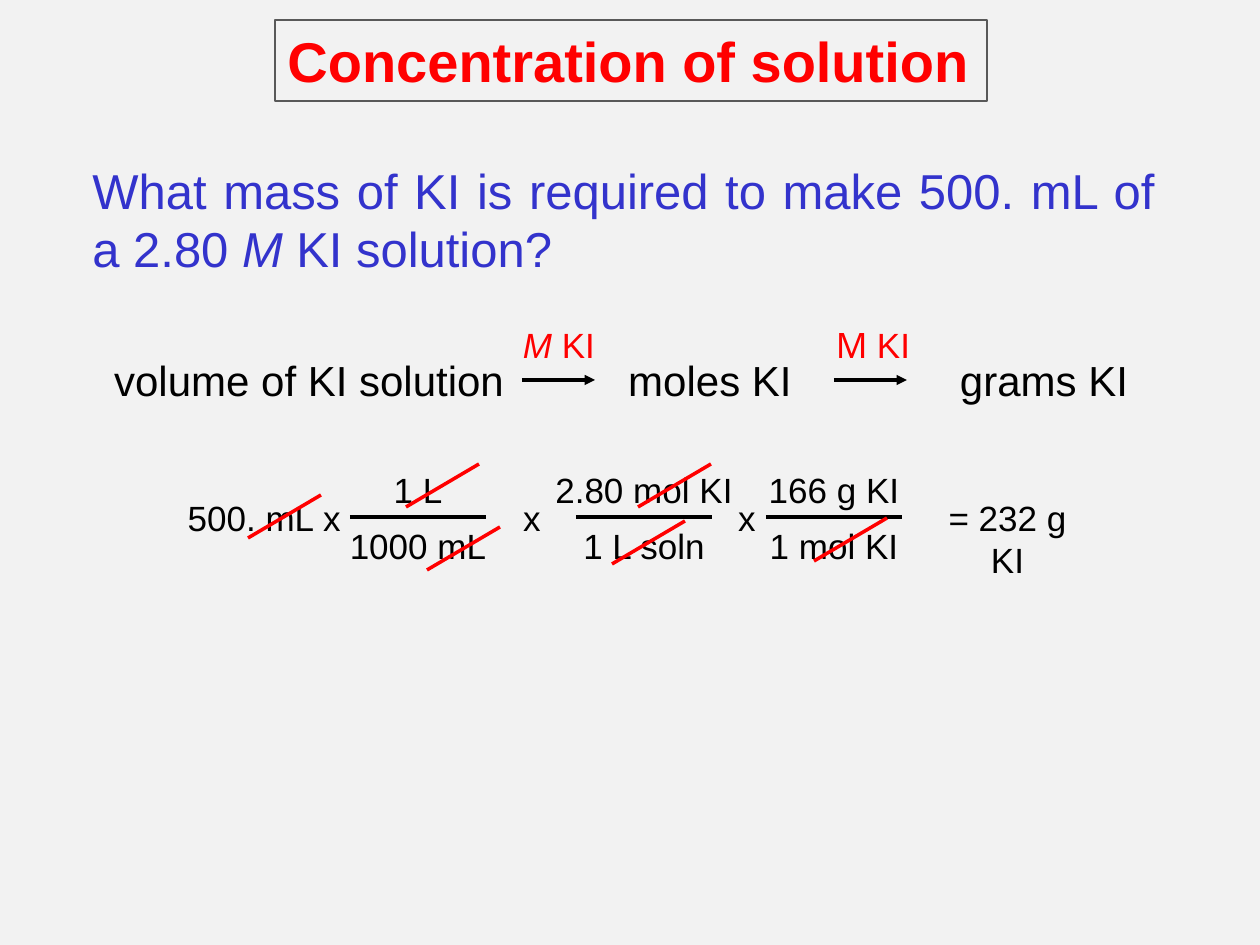
from dataclasses import dataclass
from typing import NamedTuple

from lxml import etree
from pptx import Presentation
from pptx import util as u
from pptx.dml.color import RGBColor
from pptx.enum import shapes, text
from pptx.oxml.ns import qn

PX = 914400 / 126  # EMU in one px


@dataclass(frozen=True)
class Theme:
    page: str = "F2F2F2"
    ink: str = "000000"
    accent: str = "FF0000"
    question: str = "3333CC"
    frame: str = "595959"
    font: str = "Arial"
    symbol_font: str = "Noto Sans"
    title_size: int = 32
    question_size: int = 28
    chain_size: int = 24
    small_size: int = 20


THEME = Theme()


class Box(NamedTuple):
    left: int
    top: int
    width: int
    height: int


class Span(NamedTuple):
    words: str
    style: dict = {}


class Label(NamedTuple):
    """Text centred on the x position middle."""
    middle: int
    top: int
    width: int
    spans: list[Span]
    style: dict
    wrap: bool = False


class Fraction(NamedTuple):
    times_middle: int
    middle: int
    numerator: str
    denominator: str


class Stroke(NamedTuple):
    x: int
    y: int
    dx: int
    dy: int
    color: str
    weight: float
    arrow: bool = False


def emu(*lengths: int) -> list[u.Emu]:
    return [u.Emu(round(length * PX)) for length in lengths]


def write(shape, spans: list[Span], style: dict, align: text.PP_ALIGN, wrap: bool) -> None:
    frame = shape.text_frame
    frame.word_wrap = wrap
    frame.auto_size = text.MSO_AUTO_SIZE.SHAPE_TO_FIT_TEXT
    frame.vertical_anchor = text.MSO_ANCHOR.TOP
    para = frame.paragraphs[0]
    para.alignment = align
    for span in spans:
        run = para.add_run()
        run.text = span.words
        values = {"name": THEME.font} | style | span.style
        run.font.color.rgb = RGBColor.from_string(values.pop("color"))
        for name, value in values.items():
            setattr(run.font, name, value)


def add_label(page, label: Label) -> None:
    height = 63 if label.style is CHAIN else 54
    left = label.middle - label.width // 2
    box = page.shapes.add_textbox(*emu(left, label.top, label.width, height))
    write(box, label.spans, label.style, text.PP_ALIGN.CENTER, label.wrap)


def add_stroke(page, stroke: Stroke) -> None:
    ends = emu(stroke.x, stroke.y, stroke.x + stroke.dx, stroke.y + stroke.dy)
    line = page.shapes.add_connector(shapes.MSO_CONNECTOR.STRAIGHT, *ends)
    line.line.color.rgb = RGBColor.from_string(stroke.color)
    line.line.width = u.Pt(stroke.weight)
    properties = line.line._get_or_add_ln()
    if stroke.arrow:
        etree.SubElement(properties, qn("a:tailEnd"), type="triangle")
    etree.SubElement(properties.getparent(), qn("a:effectLst"))


def add_fraction(page, fraction: Fraction) -> None:
    for middle, top, width, words in (
        (fraction.middle, 462, 208, fraction.numerator),
        (fraction.middle, 518, 168, fraction.denominator),
        (fraction.times_middle, FACTOR_TOP, 46, "x"),
    ):
        add_label(page, Label(middle, top, width, [Span(words)], SMALL))
    add_stroke(page, Stroke(fraction.middle - 68, 517, 136, 0, THEME.ink, 2))


def add_title(page, box: Box, words: str) -> None:
    title = page.shapes.add_shape(shapes.MSO_SHAPE.RECTANGLE, *emu(*box))
    title.shadow.inherit = False
    title.fill.background()
    title.line.color.rgb = RGBColor.from_string(THEME.frame)
    title.line.width = u.Pt(0.75)
    write(title, [Span(words)], TITLE, text.PP_ALIGN.LEFT, False)


TITLE = {"size": u.Pt(THEME.title_size), "color": THEME.accent, "bold": True}
QUESTION = {"size": u.Pt(THEME.question_size), "color": THEME.question}
CHAIN = {"size": u.Pt(THEME.chain_size), "color": THEME.ink}
SMALL = {"size": u.Pt(THEME.small_size), "color": THEME.ink}
STEP = SMALL | {"color": THEME.accent}
ITALIC = {"italic": True}
FACTOR_TOP = 490

QUESTION_SPANS = [
    Span("What mass of KI is required to make 500. mL of a 2.80 "),
    Span("M", ITALIC),
    Span(" KI solution?"),
]
LABELS = [
    Label(309, 348, 420, [Span("volume of KI solution")], CHAIN),
    Label(710, 348, 192, [Span("moles KI")], CHAIN),
    Label(1044, 348, 196, [Span("grams KI")], CHAIN),
    Label(559, 317, 100, [Span("M", ITALIC), Span(" KI")], STEP),
    Label(873, 317, 112, [Span("M ", {"name": THEME.symbol_font}), Span("KI")], STEP),
    Label(251, FACTOR_TOP, 158, [Span("500. mL")], SMALL),
    Label(1007, FACTOR_TOP, 185, [Span("= 232 g KI")], SMALL, wrap=True),
]
FRACTIONS = [
    Fraction(332, 418, "1 L", "1000 mL"),
    Fraction(532, 644, "2.80 mol KI", "1 L soln"),
    Fraction(747, 834, "166 g KI", "1 mol KI"),
]
ARROW_STARTS = [522, 834]
CANCEL_STARTS = [(248, 538), (427, 570), (406, 507), (612, 564), (638, 507), (814, 561)]


def main() -> None:
    deck = Presentation()
    deck.slide_width, deck.slide_height = emu(1260, 945)
    page = deck.slides.add_slide(deck.slide_layouts[6])
    page.background.fill.solid()
    page.background.fill.fore_color.rgb = RGBColor.from_string(THEME.page)

    question = page.shapes.add_textbox(*emu(*Box(80, 154, 1087, 130)))
    write(question, QUESTION_SPANS, QUESTION, text.PP_ALIGN.JUSTIFY, True)
    for label in LABELS:
        add_label(page, label)
    for x in ARROW_STARTS:
        add_stroke(page, Stroke(x, 380, 73, 0, THEME.ink, 1.75, arrow=True))
    for fraction in FRACTIONS:
        add_fraction(page, fraction)
    for x, y in CANCEL_STARTS:
        add_stroke(page, Stroke(x, y, 73, -43, THEME.accent, 2))
    add_title(page, Box(275, 20, 712, 81), "Concentration of solution")
    deck.save("out.pptx")


if __name__ == "__main__":
    main()
